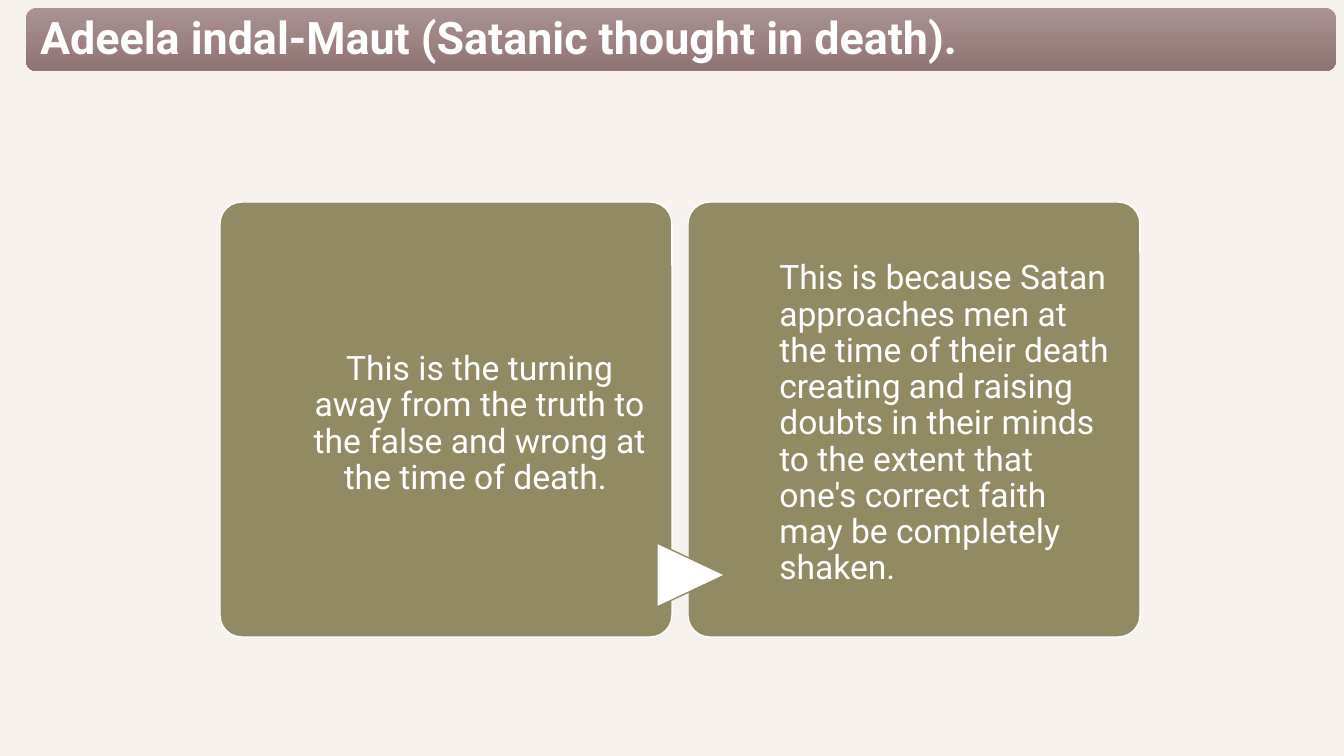
import copy
from dataclasses import dataclass

import pptx
import pptx.dml.color
import pptx.enum.shapes
import pptx.enum.text
import pptx.util

SHAPE = pptx.enum.shapes.MSO_SHAPE
ALIGN = pptx.enum.text.PP_ALIGN
ANCHOR = pptx.enum.text.MSO_ANCHOR


@dataclass(frozen=True)
class Theme:
    font: str = "Roboto"
    title_size: int = 32
    body_size: int = 24
    background: str = "F7F2EE"
    light: str = "FFFFFF"
    card: str = "928A63"
    banner: tuple = ((0, "A99292"), (0.5, "9F8383"), (1, "8F7373"))


def px(n):
    return pptx.util.Emu(round(n * 914400 / 100.8))


def rgb(value):
    return pptx.dml.color.RGBColor.from_string(value)


def apply(target, formats):
    for name, value in formats.items():
        setattr(target, name, value)


class SlideBuilder:
    def __init__(self, prs, theme):
        self.theme = theme
        self.s = prs.slides.add_slide(prs.slide_layouts[6])
        fill = self.s.background.fill
        fill.solid()
        fill.fore_color.rgb = rgb(theme.background)

    def shape(self, kind, x, y, w, h, fill=None, line=None):
        sp = self.s.shapes.add_shape(kind, px(x), px(y), px(w), px(h))
        sp.shadow.inherit = False
        if fill:
            sp.fill.solid()
            sp.fill.fore_color.rgb = rgb(fill)
        if line:
            sp.line.color.rgb = rgb(line)
            sp.line.width = pptx.util.Pt(1)
        else:
            sp.line.fill.background()
        return sp

    def text(self, sp, text, size, insets, align=ALIGN.LEFT, bold=False):
        tf = sp.text_frame
        left, top, right, bottom = map(px, insets)
        apply(tf, {"word_wrap": True, "vertical_anchor": ANCHOR.MIDDLE,
                   "margin_left": left, "margin_top": top,
                   "margin_right": right, "margin_bottom": bottom})
        p = tf.paragraphs[0]
        apply(p, {"alignment": align, "line_spacing": 0.9})
        r = p.add_run()
        r.text = text
        apply(r.font, {"name": self.theme.font, "size": pptx.util.Pt(size), "bold": bold})
        r.font.color.rgb = rgb(self.theme.light)

    def banner(self, text, x, y, w, h):
        sp = self.shape(SHAPE.ROUNDED_RECTANGLE, x, y, w, h)
        sp.fill.gradient()
        sp.fill.gradient_angle = 270
        # The default gradient has two stops; add one for the middle colour
        gs = sp.fill._fill._gradFill.gsLst
        gs.append(copy.deepcopy(gs[-1]))
        for stop, (position, color) in zip(sp.fill.gradient_stops, self.theme.banner):
            stop.position = position
            stop.color.rgb = rgb(color)
        self.text(sp, text, self.theme.title_size, (11, 10, 10, 10), bold=True)

    def card(self, text, x, y, w, h, align):
        sp = self.shape(SHAPE.ROUNDED_RECTANGLE, x, y, w, h,
                        self.theme.card, self.theme.light)
        sp.adjustments[0] = 0.05
        self.text(sp, text, self.theme.body_size, (85, 9, 18, 0), align)

    def pointer(self, x, y, w, h):
        sp = self.shape(SHAPE.FLOWCHART_EXTRACT, x, y, w, h,
                        self.theme.light, self.theme.card)
        sp.rotation = 90


def main():
    prs = pptx.Presentation()
    prs.slide_width, prs.slide_height = px(1344), px(756)
    slide = SlideBuilder(prs, Theme())

    # Title banner
    slide.banner("Adeela indal-Maut (Satanic thought in death).", 26, 8, 1310, 63)

    # Definition and reason cards
    cards = [
        ("This is the turning away from the truth to the false and wrong "
         "at the time of death. ", ALIGN.CENTER),
        ("This is because Satan approaches men at the time of their death "
         "creating and raising doubts in their minds to the extent that "
         "one's correct faith may be completely shaken.", ALIGN.LEFT),
    ]
    left, width, gap = 220, 452, 16
    for i, (text, align) in enumerate(cards):
        slide.card(text, left + i * (width + gap), 202, width, 435, align)

    # Pointer from the first card to the second
    slide.pointer(659, 541, 64, 68)

    prs.save("out.pptx")


if __name__ == "__main__":
    main()
